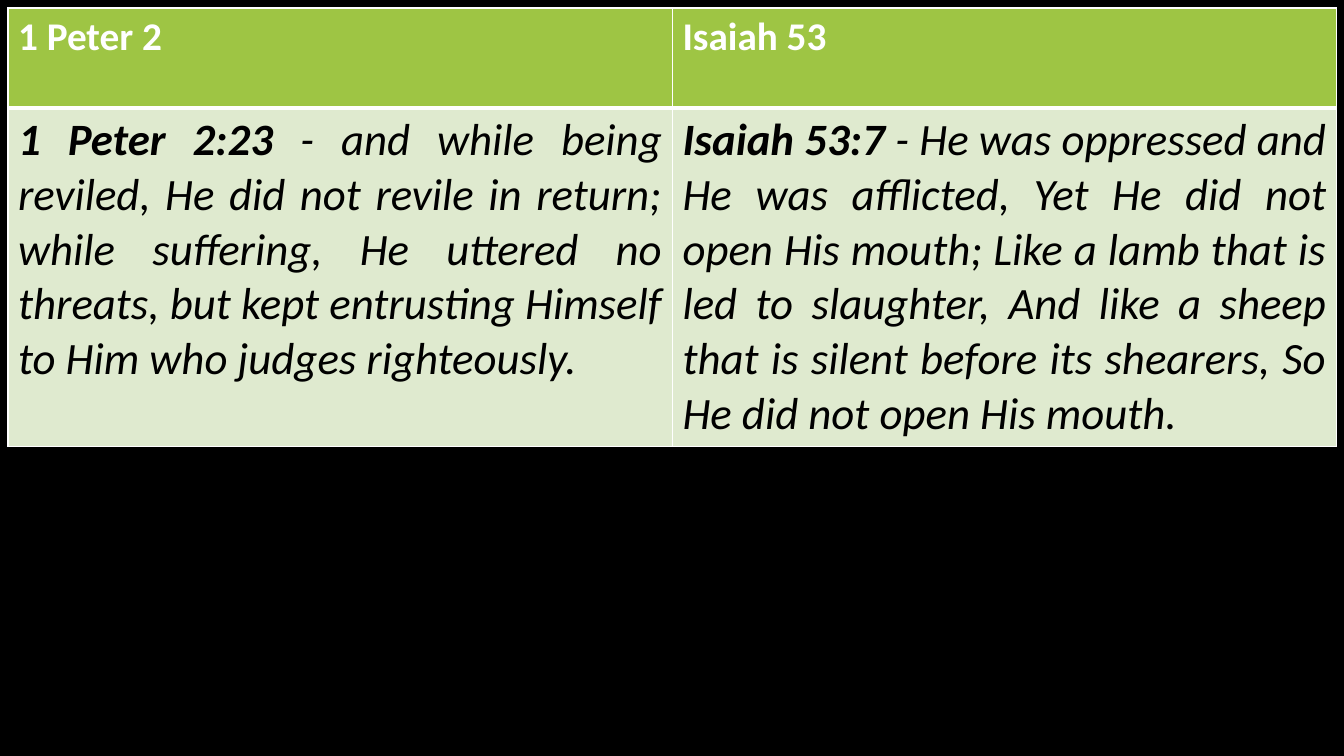
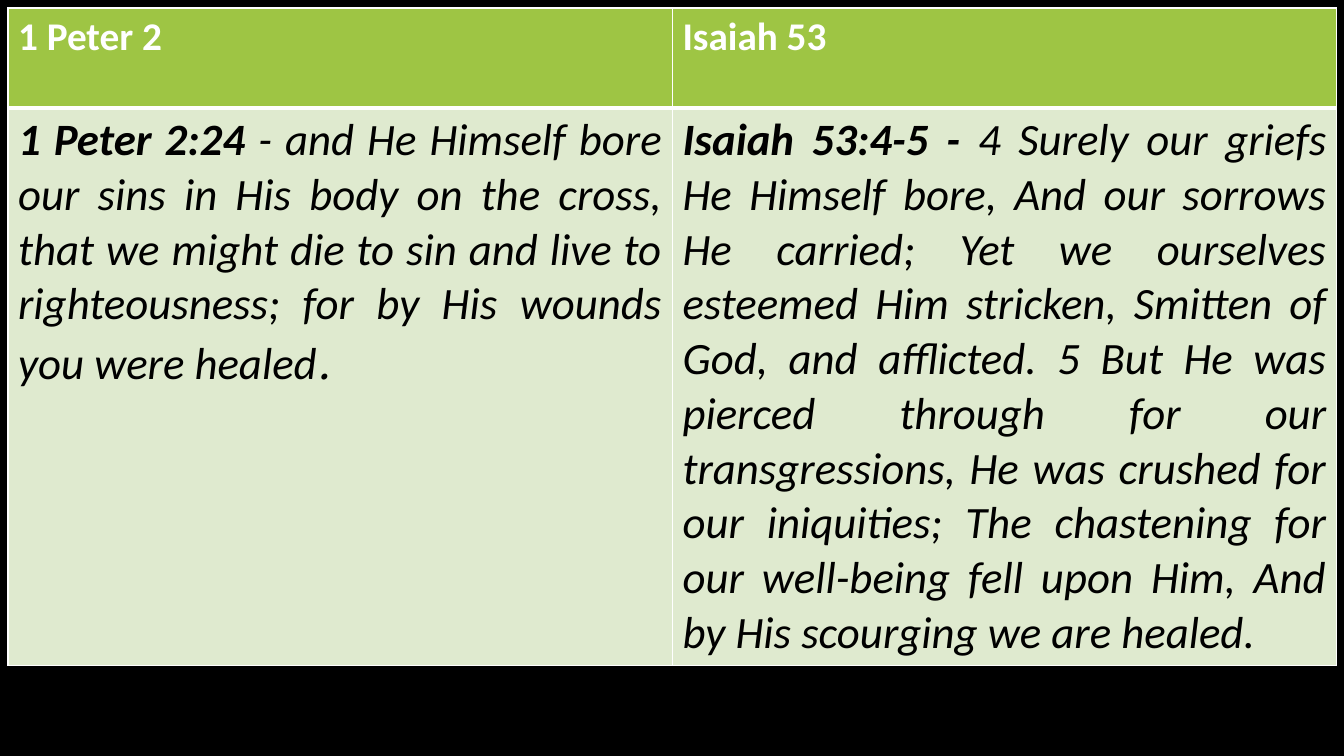
from lxml import etree
from pptx import Presentation
from pptx.dml.color import RGBColor
from pptx.enum import text
from pptx.oxml import ns
from pptx.util import Inches, Pt

BLACK = RGBColor(0x00, 0x00, 0x00)
WHITE = RGBColor(0xFF, 0xFF, 0xFF)
GREEN = RGBColor(0x9E, 0xC5, 0x44)
PALE_GREEN = RGBColor(0xDF, 0xEA, 0xCF)
FONT = "Calibri"
STOP_FONT = "TeX Gyre Bonum"

HEADINGS = ["1 Peter 2", "Isaiah 53"]
MARGIN, COLUMN_WIDTH, HEADER_HEIGHT = 0.08, 6.59, 0.99

# Each slide: height of the verse row, then one list of (text, bold, font) per column
COMPARISONS = [
    (3.3, [
        [("1 Peter 2:23", True, FONT),
         (" - and while being reviled, He did not revile in return; while suffering, "
          "He uttered no threats, but kept entrusting Himself to Him who judges "
          "righteously.", False, FONT)],
        [("Isaiah 53:7", True, FONT),
         (" - He was oppressed and He was afflicted, Yet He did not open His mouth; "
          "Like a lamb that is led to slaughter, And like a sheep that is silent before "
          "its shearers, So He did not open His mouth.", False, FONT)],
    ]),
    (5.43, [
        [("1 Peter 2:24", True, FONT),
         (" - and He Himself bore our sins in His body on the cross, that we might die "
          "to sin and live to righteousness; for by His wounds you were healed",
          False, FONT),
         (".", False, STOP_FONT)],
        [("Isaiah 53:4-5 - ", True, FONT),
         ("4 Surely our griefs He Himself bore, And our sorrows He carried; Yet we "
          "ourselves esteemed Him stricken, Smitten of God, and afflicted. 5 But He was "
          "pierced through for our transgressions, He was crushed for our iniquities; "
          "The chastening for our well-being fell upon Him, And by His scourging we are "
          "healed.", False, FONT)],
    ]),
]


def style_cell(cell, fill, top, bottom):
    """Give a cell white borders (top and bottom in points) and a solid fill."""
    properties = cell._tc.get_or_add_tcPr()
    for side, width in (("L", 1), ("R", 1), ("T", top), ("B", bottom)):
        line = etree.SubElement(properties, ns.qn(f"a:ln{side}"), w=str(Pt(width)))
        paint = etree.SubElement(line, ns.qn("a:solidFill"))
        etree.SubElement(paint, ns.qn("a:srgbClr"), val=str(WHITE))
    cell.fill.solid()
    cell.fill.fore_color.rgb = fill


def add_span(para, words, size, color, bold, italic=False, font=FONT):
    span = para.add_run()
    span.text = words
    span.font.name = font
    span.font.size = Pt(size)
    span.font.color.rgb = color
    span.font.bold = bold
    span.font.italic = italic


# Deck with a black background shared through the master
deck = Presentation()
deck.slide_width, deck.slide_height = Inches(13.33), Inches(7.5)
background = deck.slide_master.background.fill
background.solid()
background.fore_color.rgb = BLACK
blank_layout = deck.slide_layouts.get_by_name("Blank")

for verse_height, verses in COMPARISONS:
    page = deck.slides.add_slide(blank_layout)
    table = page.shapes.add_table(
        2, 2, Inches(MARGIN), Inches(MARGIN),
        Inches(2 * COLUMN_WIDTH), Inches(HEADER_HEIGHT + verse_height)).table
    table.rows[0].height = Inches(HEADER_HEIGHT)
    table.rows[1].height = Inches(verse_height)

    for index, (heading, verse) in enumerate(zip(HEADINGS, verses)):
        table.columns[index].width = Inches(COLUMN_WIDTH)

        # Heading
        cell = table.cell(0, index)
        style_cell(cell, GREEN, top=1, bottom=3)
        add_span(cell.text_frame.paragraphs[0], heading, 28, WHITE, True)

        # Verse
        cell = table.cell(1, index)
        style_cell(cell, PALE_GREEN, top=3, bottom=1)
        para = cell.text_frame.paragraphs[0]
        para.alignment = text.PP_ALIGN.JUSTIFY
        for words, bold, font in verse:
            add_span(para, words, 32, BLACK, bold, italic=True, font=font)

deck.save("out.pptx")
